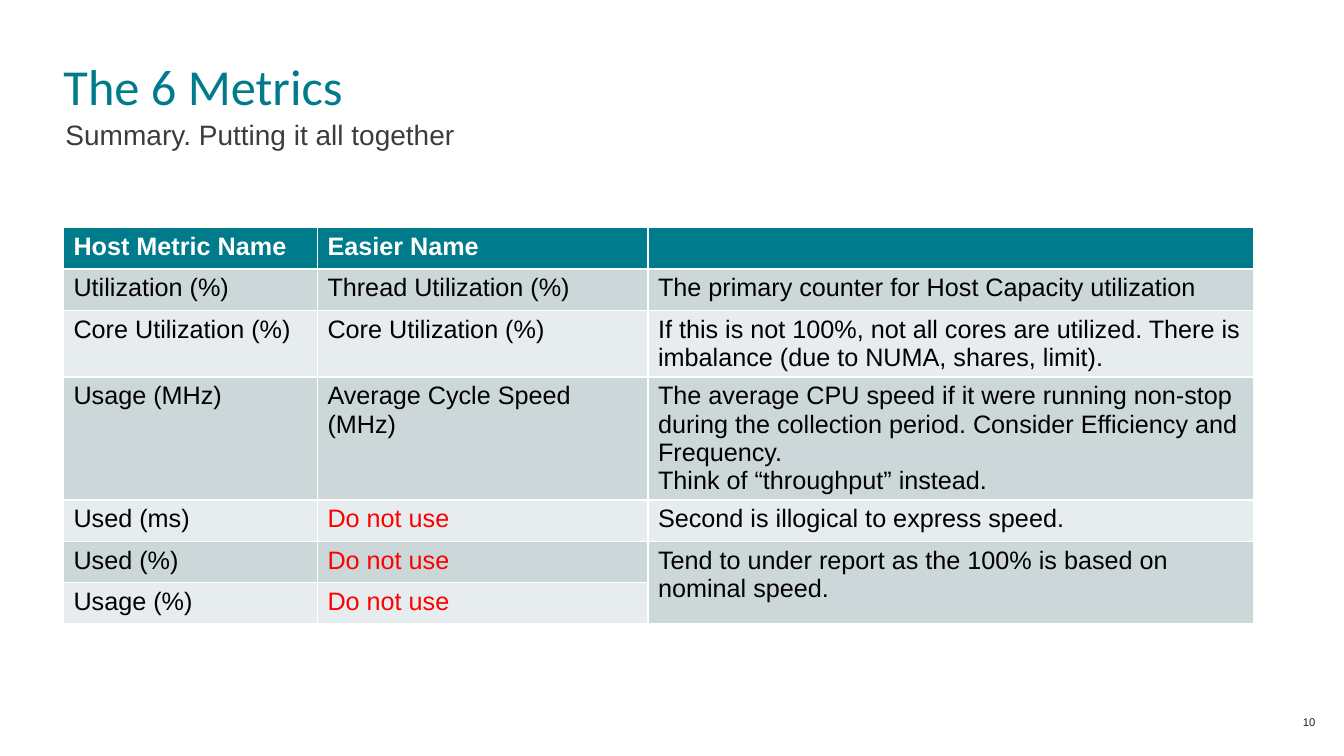
from pptx import Presentation
from pptx.dml.color import RGBColor
from pptx.enum.text import MSO_ANCHOR, MSO_AUTO_SIZE, PP_ALIGN
from pptx.util import Cm, Pt

TEAL = RGBColor(0x00, 0x7B, 0x8C)
GREY = RGBColor(0x3C, 0x3C, 0x3C)
NAVY = RGBColor(0x1B, 0x1E, 0x35)
WHITE = RGBColor(0xFF, 0xFF, 0xFF)
BLACK = RGBColor(0x00, 0x00, 0x01)
RED = RGBColor(0xFF, 0x00, 0x00)
BANDS = (RGBColor(0xE7, 0xEC, 0xEE), RGBColor(0xCC, 0xD7, 0xDA))

AVOID = "Do not use"
METRICS = [
    ("Host Metric Name", "Easier Name", ""),
    ("Utilization (%)", "Thread Utilization (%)",
     "The primary counter for Host Capacity utilization"),
    ("Core Utilization (%)", "Core Utilization (%)",
     "If this is not 100%, not all cores are utilized. There is imbalance "
     "(due to NUMA, shares, limit)."),
    ("Usage (MHz)", "Average Cycle Speed (MHz)",
     "The average CPU speed if it were running non-stop during the collection "
     "period. Consider Efficiency and Frequency.\n"
     "Think of “throughput” instead."),
    ("Used (ms)", AVOID, "Second is illogical to express speed."),
    ("Used (%)", AVOID,
     "Tend to under report as the 100% is based on nominal speed."),
    ("Usage (%)", AVOID, ""),
]
COLUMN_WIDTHS = (6.4, 8.33, 15.27)
ROW_HEIGHTS = (1.04, 1.04, 1.68, 3.1, 1.04, 1.04, 1.04)


def style_font(paragraph, size, color, name="Arial", bold=False):
    font = paragraph.font
    font.name = name
    font.size = Pt(size)
    font.bold = bold
    font.color.rgb = color


def write_line(holder, text, box, size, color, name="Arial",
               anchor=MSO_ANCHOR.TOP, align=PP_ALIGN.LEFT, spacing=1.0):
    holder.left, holder.top, holder.width, holder.height = map(Cm, box)
    frame = holder.text_frame
    frame.text = text
    frame.word_wrap = True
    frame.auto_size = MSO_AUTO_SIZE.NONE
    frame.vertical_anchor = anchor
    frame.margin_left = frame.margin_right = 0
    frame.margin_top = frame.margin_bottom = 0
    line = frame.paragraphs[0]
    line.alignment = align
    line.line_spacing = spacing
    line.space_before = Pt(0)
    style_font(line, size, color, name)


def fill_cell(cell, text, fill, color, bold):
    cell.fill.solid()
    cell.fill.fore_color.rgb = fill
    cell.text = text
    for paragraph in cell.text_frame.paragraphs:
        style_font(paragraph, 18, color, bold=bold)


def add_metrics_table(slide):
    metrics = slide.shapes.add_table(
        len(METRICS), len(COLUMN_WIDTHS), Cm(1.6), Cm(5.74),
        Cm(sum(COLUMN_WIDTHS)), Cm(sum(ROW_HEIGHTS))).table
    for column, width in zip(metrics.columns, COLUMN_WIDTHS):
        column.width = Cm(width)
    for row, height in zip(metrics.rows, ROW_HEIGHTS):
        row.height = Cm(height)
    for r, entries in enumerate(METRICS):
        header = r == 0
        fill = TEAL if header else BANDS[r % 2]
        for c, text in enumerate(entries):
            color = WHITE if header else RED if text == AVOID else BLACK
            fill_cell(metrics.cell(r, c), text, fill, color, header)
    metrics.cell(5, 2).merge(metrics.cell(6, 2))


def main():
    deck = Presentation()
    deck.slide_width, deck.slide_height = Cm(33.87), Cm(19.05)
    slide = deck.slides.add_slide(deck.slide_layouts[0])
    write_line(slide.shapes.title, "The 6 Metrics", (1.6, 1.14, 30.56, 1.8),
               36, TEAL, "Calibri", MSO_ANCHOR.BOTTOM, spacing=0.9)
    write_line(slide.placeholders[1], "Summary. Putting it all together",
               (1.65, 2.97, 30.45, 0.69), 20, GREY)
    add_metrics_table(slide)
    page_number = slide.shapes.add_textbox(0, 0, 0, 0)
    write_line(page_number, "10", (31.93, 17.96, 1.22, 0.51), 8, NAVY,
               anchor=MSO_ANCHOR.MIDDLE, align=PP_ALIGN.RIGHT, spacing=0.9)
    deck.save("out.pptx")


if __name__ == "__main__":
    main()
